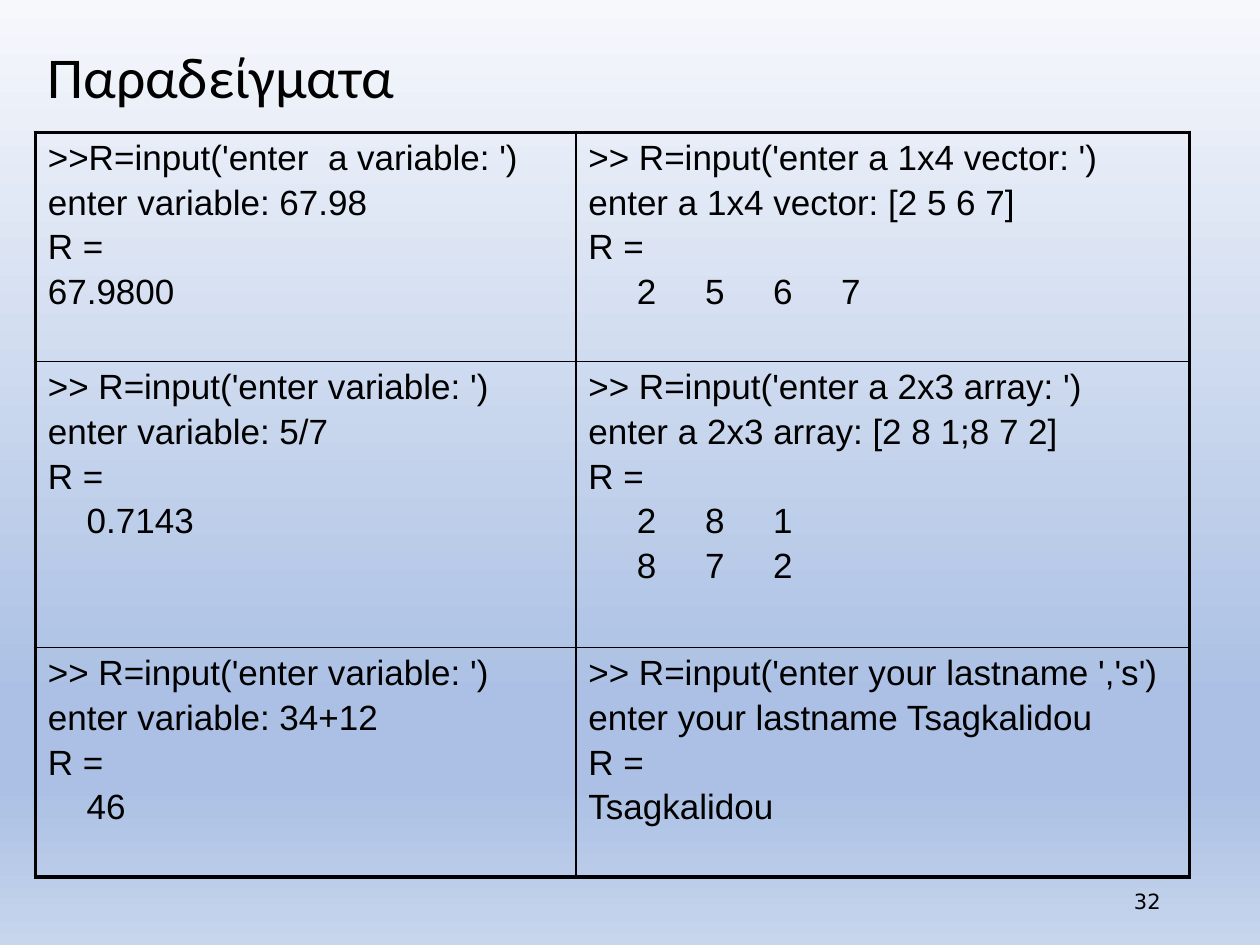
import copy

import pptx
import pptx.dml.color
import pptx.enum.text
import pptx.oxml
import pptx.oxml.ns
import pptx.util

Inches, Pt = pptx.util.Inches, pptx.util.Pt
RGB = pptx.dml.color.RGBColor.from_string
qn = pptx.oxml.ns.qn
ALIGN = pptx.enum.text.PP_ALIGN
MIDDLE = pptx.enum.text.MSO_ANCHOR.MIDDLE

# Content
TITLE = "Παραδείγματα"
PAGE_NUMBER = "32"
EXAMPLES = [
    [
        [">>R=input('enter  a variable: ')", "enter variable: 67.98", "R =", "67.9800"],
        [">> R=input('enter a 1x4 vector: ')", "enter a 1x4 vector: [2 5 6 7]", "R =",
         "     2     5     6     7"],
    ],
    [
        [">> R=input('enter variable: ')", "enter variable: 5/7", "R =", "    0.7143"],
        [">> R=input('enter a 2x3 array: ')", "enter a 2x3 array: [2 8 1;8 7 2]", "R =",
         "     2     8     1", "     8     7     2"],
    ],
    [
        [">> R=input('enter variable: ')", "enter variable: 34+12", "R =", "    46"],
        [">> R=input('enter your lastname ','s')", "enter your lastname Tsagkalidou",
         "R =", "Tsagkalidou"],
    ],
]
COLUMN_WIDTHS = [4.29, 4.87]
ROW_HEIGHTS = [1.82, 2.27, 1.82]

THEME = {
    "ink": "000000",
    "backdrop": [(0, "F6F8FC"), (0.74, "ABC0E4"), (0.83, "ABC0E4"), (1, "C7D5ED")],
    "title": ("Calibri", 33),
    "code": ("Arial", 20),
    "number": ("DejaVu Sans", 12),
    "line_gap": 3.3,
    "outer_line": 2.25,
    "inner_line": 1,
}


def style(para, role):
    para.font.name, size = THEME[role]
    para.font.size = Pt(size)
    para.font.color.rgb = RGB(THEME["ink"])


def paint_backdrop(page):
    fill = page.background.fill
    fill.gradient()
    fill.gradient_angle = 270
    stop_list = page.element.find(".//" + qn("a:gsLst"))
    while len(stop_list) < len(THEME["backdrop"]):
        stop_list.append(copy.deepcopy(stop_list[0]))
    for stop, (position, color) in zip(fill.gradient_stops, THEME["backdrop"]):
        stop.position = position
        stop.color.rgb = RGB(color)


def draw_borders(cell, outer_sides):
    """Heavy lines on the table's outer sides, thin ones elsewhere."""
    properties = cell._tc.get_or_add_tcPr()
    for index, side in enumerate("LRTB"):
        weight = THEME["outer_line" if side in outer_sides else "inner_line"]
        properties.insert(index, pptx.oxml.parse_xml(
            f'<a:ln{side} {pptx.oxml.ns.nsdecls("a")} w="{Pt(weight)}">'
            f'<a:solidFill><a:srgbClr val="{THEME["ink"]}"/></a:solidFill></a:ln{side}>'))


def fill_cell(cell, lines):
    cell.fill.background()
    frame = cell.text_frame
    for index, line in enumerate(lines):
        para = frame.add_paragraph() if index else frame.paragraphs[0]
        para.text = line
        style(para, "code")
        if index:
            para.space_before = Pt(THEME["line_gap"])


def add_examples(page):
    table = page.shapes.add_table(
        len(ROW_HEIGHTS), len(COLUMN_WIDTHS), Inches(0.28), Inches(1.05),
        Inches(sum(COLUMN_WIDTHS)), Inches(sum(ROW_HEIGHTS))).table
    table.first_row = table.horz_banding = False
    for column, width in zip(table.columns, COLUMN_WIDTHS):
        column.width = Inches(width)
    for row, height in zip(table.rows, ROW_HEIGHTS):
        row.height = Inches(height)
    last_row, last_column = len(ROW_HEIGHTS) - 1, len(COLUMN_WIDTHS) - 1
    for r, row in enumerate(EXAMPLES):
        for c, lines in enumerate(row):
            cell = table.cell(r, c)
            fill_cell(cell, lines)
            outer = {"L": c == 0, "R": c == last_column, "T": r == 0, "B": r == last_row}
            draw_borders(cell, [side for side, is_outer in outer.items() if is_outer])


def main():
    deck = pptx.Presentation()
    deck.slide_width, deck.slide_height = Inches(10), Inches(7.5)
    page = deck.slides.add_slide(deck.slide_layouts[5])
    paint_backdrop(page)

    # Title
    title = page.shapes.title
    title.left, title.top = Inches(0.28), Inches(0.26)
    title.width, title.height = Inches(8.75), Inches(0.74)
    title.text_frame.text = TITLE
    title.text_frame.vertical_anchor = MIDDLE
    para = title.text_frame.paragraphs[0]
    para.alignment = ALIGN.LEFT
    para.line_spacing = 0.9
    style(para, "title")

    # Table of input examples
    add_examples(page)

    # Page number
    box = page.shapes.add_textbox(Inches(7.06), Inches(6.95), Inches(2.25), Inches(0.4))
    box.text_frame.word_wrap = True
    box.text_frame.vertical_anchor = MIDDLE
    para = box.text_frame.paragraphs[0]
    para.text = PAGE_NUMBER
    para.alignment = ALIGN.RIGHT
    style(para, "number")

    deck.save("out.pptx")


if __name__ == "__main__":
    main()
